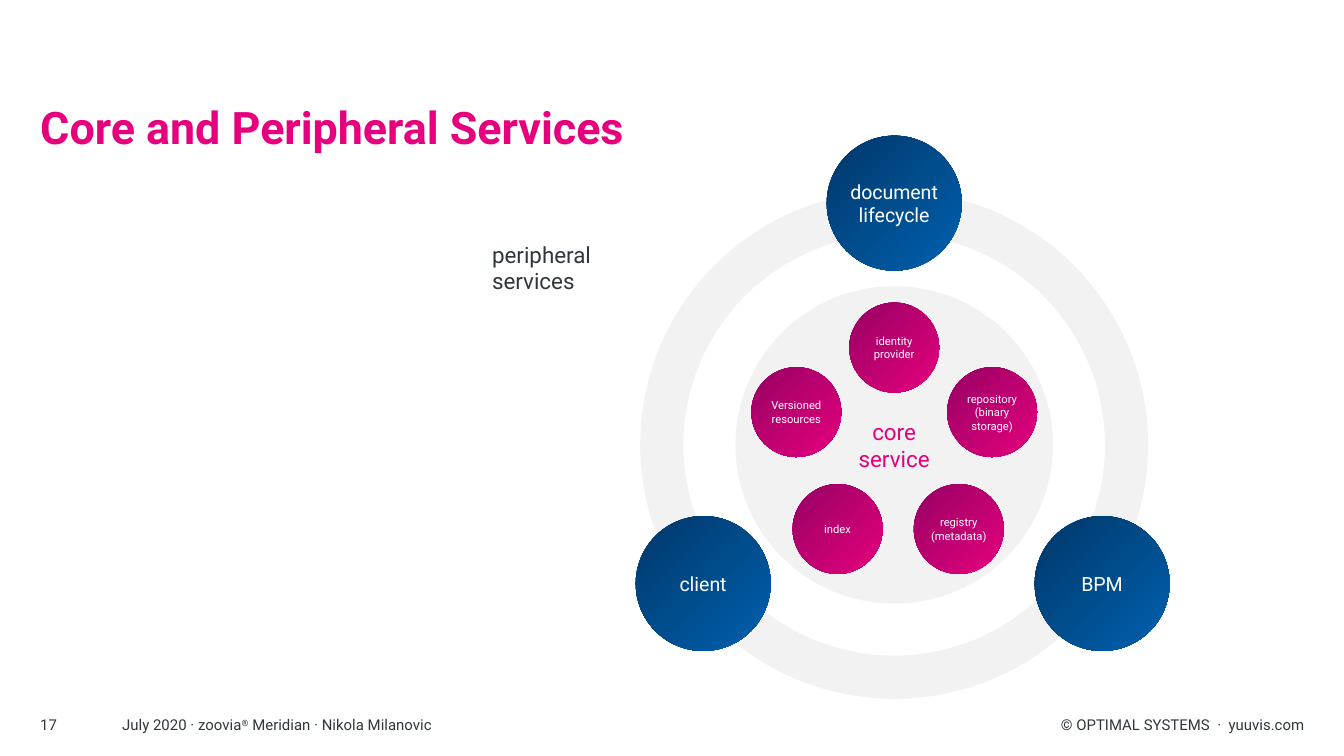
import pptx
import pptx.util
import pptx.dml.color
import pptx.enum.shapes
import pptx.enum.text

Cm = pptx.util.Cm
RGB = pptx.dml.color.RGBColor
SHAPE = pptx.enum.shapes.MSO_SHAPE
ALIGN = pptx.enum.text.PP_ALIGN
ANCHOR = pptx.enum.text.MSO_ANCHOR

INK = RGB(0x2E, 0x37, 0x3C)
PINK = RGB(0xE6, 0x00, 0x7D)
PLUM = RGB(0x96, 0x00, 0x64)
NAVY = RGB(0x00, 0x37, 0x69)
BLUE = RGB(0x00, 0x61, 0xAF)
PALE = RGB(0xF2, 0xF2, 0xF2)
WHITE = RGB(0xFF, 0xFF, 0xFF)

PERIPHERAL_SERVICES = [
    ("client", -3.61, 2.62),
    ("BPM", 3.93, 2.62),
    ("document lifecycle", 0, -4.57),
]
CORE_SERVICES = [
    ("identity provider", 0, -1.84),
    ("repository (binary storage)", 1.85, -0.62),
    ("registry (metadata)", 1.22, 1.59),
    ("index", -1.07, 1.59),
    ("Versioned resources", -1.85, -0.62),
]


def format_text(frame, size, color, align=ALIGN.LEFT, anchor=ANCHOR.TOP, bold=False):
    """Apply one text style to a whole frame without insets."""
    frame.word_wrap = True
    frame.vertical_anchor = anchor
    frame.margin_left = frame.margin_right = 0
    frame.margin_top = frame.margin_bottom = 0
    for paragraph in frame.paragraphs:
        paragraph.alignment = align
        for run in paragraph.runs:
            run.font.name = "Roboto"
            run.font.size = pptx.util.Pt(size)
            run.font.bold = bold
            run.font.color.rgb = color


def add_label(slide, box, text, size=8, align=ALIGN.LEFT, anchor=ANCHOR.BOTTOM):
    """Add a text box in the ink colour and return it."""
    label = slide.shapes.add_textbox(*map(Cm, box))
    label.text_frame.text = text
    format_text(label.text_frame, size, INK, align, anchor)
    return label


def add_round(slide, kind, center_x, center_y, diameter, colors):
    """Add a round shape about a centre, filled flat or with a diagonal gradient."""
    left, top = center_x - diameter / 2, center_y - diameter / 2
    disc = slide.shapes.add_shape(kind, Cm(left), Cm(top), Cm(diameter), Cm(diameter))
    disc.shadow.inherit = False
    disc.line.fill.background()
    if len(colors) == 1:
        disc.fill.solid()
        disc.fill.fore_color.rgb = colors[0]
    else:
        disc.fill.gradient()
        disc.fill.gradient_angle = 315
        for stop, color, position in zip(disc.fill.gradient_stops, colors, (0, 1)):
            stop.color.rgb = color
            stop.position = position
    return disc


def add_services(slide, center_x, center_y, services, diameter, colors, size):
    """Place the labelled service discs around a centre."""
    for name, dx, dy in services:
        disc = add_round(slide, SHAPE.OVAL, center_x + dx, center_y + dy, diameter, colors)
        disc.text_frame.text = name
        format_text(disc.text_frame, size, WHITE, ALIGN.CENTER, ANCHOR.MIDDLE)


def add_service_map(slide, box):
    """Draw the outer ring, the core and all services in a square box."""
    left, top, side = box
    center_x, center_y = left + side / 2, top + side / 2
    ring = add_round(slide, SHAPE.DONUT, center_x, center_y, side, [PALE])
    ring.adjustments[0] = 0.085
    add_services(slide, center_x, center_y, PERIPHERAL_SERVICES, 2.55, [NAVY, BLUE], 10.5)
    core = add_round(slide, SHAPE.OVAL, center_x, center_y, 6, [PALE])
    core.text_frame.text = "core\nservice"
    format_text(core.text_frame, 12, PINK, ALIGN.CENTER, ANCHOR.MIDDLE)
    add_services(slide, center_x, center_y, CORE_SERVICES, 1.7, [PLUM, PINK], 6)


def add_title(slide, box, text):
    """Move and format the title placeholder."""
    title = slide.shapes.title
    title.left, title.top, title.width, title.height = map(Cm, box)
    title.text_frame.text = text
    title.text_frame.auto_size = pptx.enum.text.MSO_AUTO_SIZE.NONE
    format_text(title.text_frame, 24, PINK, anchor=ANCHOR.BOTTOM, bold=True)
    title.text_frame.paragraphs[0].line_spacing = 0.9


def add_footer(slide, box):
    """Add page number, event line and copyright line along a strip."""
    left, top, width, height = box
    add_label(slide, (left, top, 1, height), "17")
    event = add_label(slide, (left + 1.55, top, 17, height), "July 2020 · zoovia")
    paragraph = event.text_frame.paragraphs[0]
    registered = paragraph.add_run()
    registered.text = "®"
    registered._r.get_or_add_rPr().set("baseline", "30000")
    paragraph.add_run().text = " Meridian · Nikola Milanovic"
    format_text(event.text_frame, 8, INK, anchor=ANCHOR.BOTTOM)
    add_label(slide, (left + width - 5, top, 5, height),
              "© OPTIMAL SYSTEMS  ·  yuuvis.com", align=ALIGN.RIGHT)


def main():
    """Build the slide and save it."""
    deck = pptx.Presentation()
    deck.slide_width, deck.slide_height = Cm(25.4), Cm(14.29)
    slide = deck.slides.add_slide(deck.slide_layouts[5])
    add_title(slide, (0.76, 0.74, 21.34, 2.18), "Core and Peripheral Services")
    add_footer(slide, (0.76, 13.36, 23.9, 0.51))
    add_service_map(slide, (12.1, 3.61, 9.6))
    add_label(slide, (9.3, 4.55, 2.54, 2.54), "peripheral\nservices", 12, anchor=ANCHOR.TOP)
    deck.save("out.pptx")


if __name__ == "__main__":
    main()
